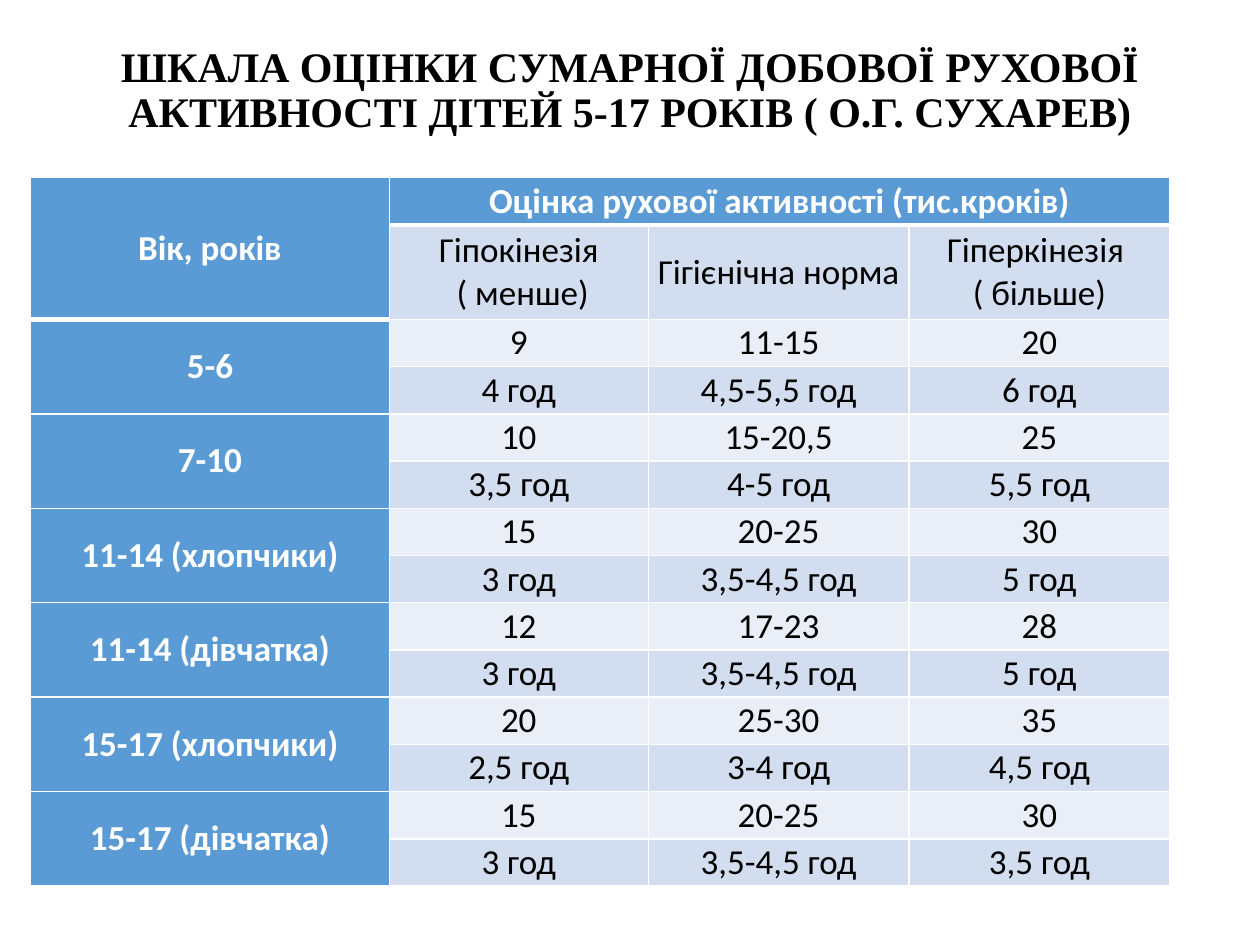
"""Build a slide with a table rating the daily motor activity of children."""
from lxml import etree
from pptx import Presentation
from pptx.dml.color import RGBColor
from pptx.enum.text import MSO_ANCHOR, MSO_AUTO_SIZE, PP_ALIGN
from pptx.oxml.ns import qn
from pptx.util import Pt

CENTER = PP_ALIGN.CENTER
MIDDLE = MSO_ANCHOR.MIDDLE
NO_AUTOFIT = MSO_AUTO_SIZE.NONE

BLACK = RGBColor(0x00, 0x00, 0x00)
WHITE = RGBColor(0xFF, 0xFF, 0xFF)
BLUE = RGBColor(0x5B, 0x9B, 0xD5)
BAND_DARK = RGBColor(0xD2, 0xDE, 0xEF)
BAND_LIGHT = RGBColor(0xEA, 0xEF, 0xF7)

TITLE = "ШКАЛА ОЦІНКИ СУМАРНОЇ ДОБОВОЇ РУХОВОЇ АКТИВНОСТІ ДІТЕЙ 5-17 РОКІВ ( О.Г. СУХАРЕВ)"
HEADINGS = [
    ["Вік, років", "Оцінка рухової активності (тис.кроків)", "", ""],
    ["", "Гіпокінезія\n ( менше)", "Гігієнічна норма", "Гіперкінезія \n( більше)"],
]
AGE_GROUPS = [
    ("5-6", ["9", "11-15", "20"], ["4 год", "4,5-5,5 год", "6 год"]),
    ("7-10", ["10", "15-20,5", "25"], ["3,5 год", "4-5 год", "5,5 год"]),
    ("11-14 (хлопчики)", ["15", "20-25", "30"], ["3 год", "3,5-4,5 год", "5 год"]),
    ("11-14 (дівчатка)", ["12", "17-23", "28"], ["3 год", "3,5-4,5 год", "5 год"]),
    ("15-17 (хлопчики)", ["20", "25-30", "35"], ["2,5 год", "3-4 год", "4,5 год"]),
    ("15-17 (дівчатка)", ["15", "20-25", "30"], ["3 год", "3,5-4,5 год", "3,5 год"]),
]
COLUMN_WIDTHS = [205, 148, 149, 149]
ROW_HEIGHT = 27


class SlideBuilder:
    """Hold the text style and the current slide."""

    title_font, title_size = "Times New Roman", 24
    table_font, table_size = "Calibri", 20

    def __init__(self, deck):
        """Add a title-only slide to the deck."""
        self.page = deck.slides.add_slide(deck.slide_layouts[5])

    def format_text(self, frame, name, size, color, bold):
        """Centre every paragraph and style its spans."""
        for para in frame.paragraphs:
            para.alignment = CENTER
            for span in para.runs:
                span.font.name = name
                span.font.size = Pt(size)
                span.font.bold = bold
                span.font.color.rgb = color

    def title(self, text, left, top, width, height):
        """Fill and place the title placeholder."""
        box = self.page.shapes.title
        box.left, box.top, box.width, box.height = Pt(left), Pt(top), Pt(width), Pt(height)
        frame = box.text_frame
        frame.text = text
        frame.word_wrap = True
        frame.auto_size = NO_AUTOFIT
        frame.vertical_anchor = MIDDLE
        frame.paragraphs[0].line_spacing = 0.9
        self.format_text(frame, self.title_font, self.title_size, BLACK, True)

    def borders(self, cell, top, bottom):
        """Draw white cell borders, ahead of the fill element."""
        properties = cell._tc.get_or_add_tcPr()
        sides = [("a:lnL", 1), ("a:lnR", 1), ("a:lnT", top), ("a:lnB", bottom)]
        for position, (tag, width) in enumerate(sides):
            line = etree.Element(qn(tag), w=str(Pt(width)))
            fill = etree.SubElement(line, qn("a:solidFill"))
            etree.SubElement(fill, qn("a:srgbClr"), val=str(WHITE))
            properties.insert(position, line)

    def cell(self, cell, text, fill, is_heading, top, bottom):
        """Fill, border and write one table cell."""
        cell.fill.solid()
        cell.fill.fore_color.rgb = fill
        self.borders(cell, top, bottom)
        cell.vertical_anchor = MIDDLE
        cell.margin_left = cell.margin_right = Pt(5)
        cell.margin_top = cell.margin_bottom = Pt(0)
        if text:
            cell.text_frame.text = text
            color = WHITE if is_heading else BLACK
            self.format_text(cell.text_frame, self.table_font, self.table_size, color, is_heading)

    def table(self, rows, left, top):
        """Add the table with its merged headings and banded rows."""
        heights = [ROW_HEIGHT * (2 if index == 1 else 1) for index in range(len(rows))]
        frame = self.page.shapes.add_table(
            len(rows), len(COLUMN_WIDTHS), Pt(left), Pt(top),
            Pt(sum(COLUMN_WIDTHS)), Pt(sum(heights)))
        table = frame.table
        for column, width in zip(table.columns, COLUMN_WIDTHS):
            column.width = Pt(width)
        for row, height in zip(table.rows, heights):
            row.height = Pt(height)
        for r, texts in enumerate(rows):
            for c, text in enumerate(texts):
                is_heading = r == 0 or c == 0
                band = BAND_DARK if r % 2 else BAND_LIGHT
                top_line = 3 if r == (2 if c == 0 else 1) else 1
                bottom_line = 3 if r == 0 or (r == 1 and c == 0) else 1
                self.cell(table.cell(r, c), text, BLUE if is_heading else band,
                          is_heading, top_line, bottom_line)
        table.cell(0, 1).merge(table.cell(0, 3))
        for r in range(0, len(rows), 2):
            table.cell(r, 0).merge(table.cell(r + 1, 0))


def main():
    """Create and save the deck."""
    deck = Presentation()
    deck.slide_width, deck.slide_height = Pt(720), Pt(540)
    rows = list(HEADINGS)
    for age, steps, hours in AGE_GROUPS:
        rows += [[age, *steps], ["", *hours]]
    builder = SlideBuilder(deck)
    builder.title(TITLE, 49.5, 13, 621, 78.5)
    builder.table(rows, 17.5, 101.5)
    deck.save("out.pptx")


if __name__ == "__main__":
    main()
